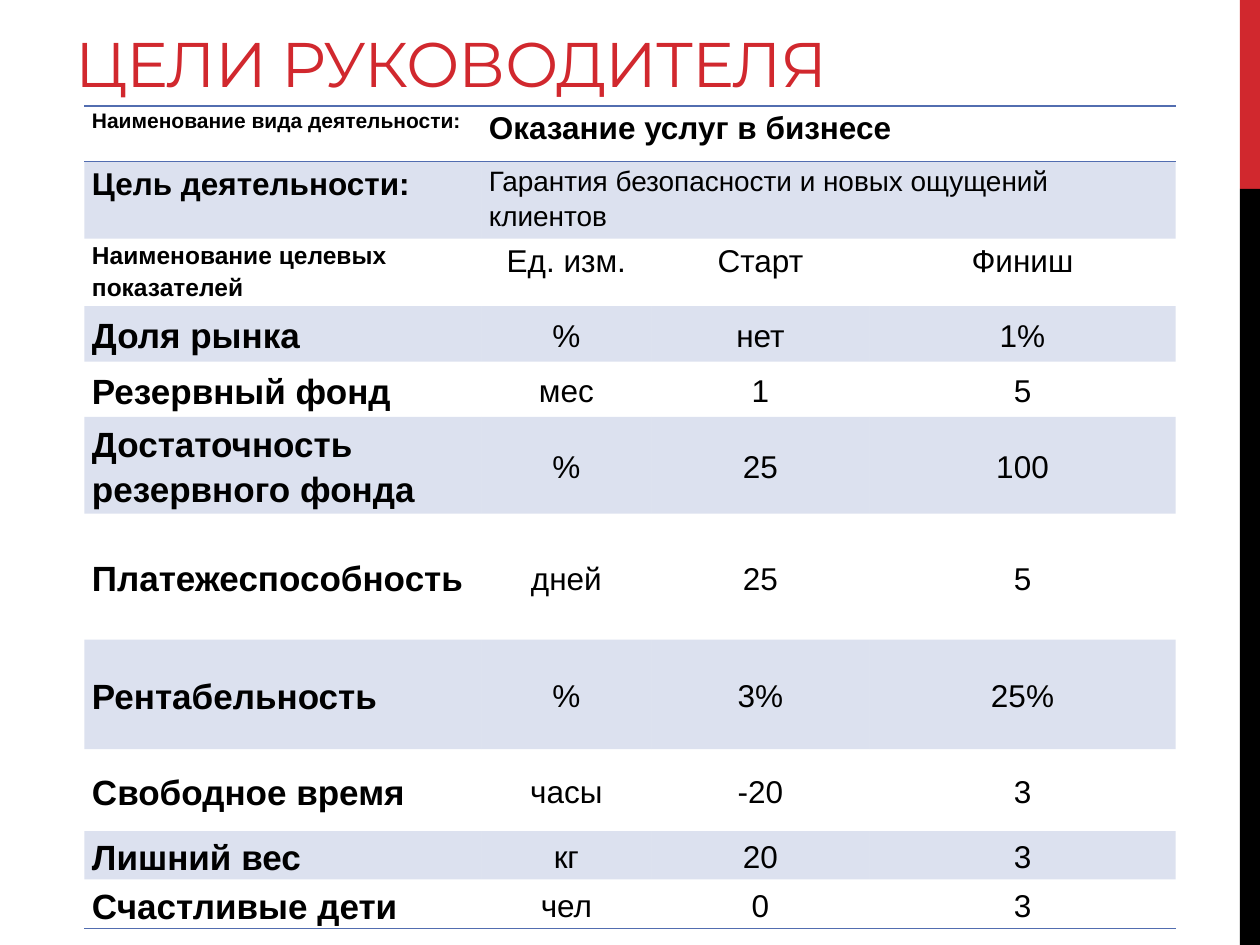
import pptx
import pptx.util
import pptx.dml.color
import pptx.enum.shapes
import pptx.enum.text
import pptx.oxml.ns
from dataclasses import dataclass
from lxml import etree

Inches, Pt = pptx.util.Inches, pptx.util.Pt
RGB = pptx.dml.color.RGBColor.from_string
ANCHOR, ALIGN = pptx.enum.text.MSO_ANCHOR, pptx.enum.text.PP_ALIGN
qn = pptx.oxml.ns.qn


@dataclass(frozen=True)
class Theme:
    accent: str = "D1282E"
    black: str = "000000"
    table: str = "526DB0"
    band_alpha: int = 20
    title_font: str = "Montserrat"
    body_font: str = "Arial"
    title: int = 36
    label: int = 20
    value: int = 18
    goal: int = 16
    heading: int = 14
    small: int = 12


T = Theme()
NO_STYLE = "{2D5ABB26-0587-4C30-8999-92F81FD0307C}"
COLS = [3.15, 1.35, 1.73, 2.43]
# Row height, then the texts of the row
ROWS = [
    (0.44, ["Наименование вида деятельности:", "Оказание услуг в бизнесе"]),
    (0.44, ["Цель деятельности:", "Гарантия безопасности и новых ощущений клиентов"]),
    (0.40, ["Наименование целевых показателей", "Ед. изм.", "Старт", "Финиш"]),
    (0.44, ["Доля рынка", "%", "нет", "1%"]),
    (0.44, ["Резервный фонд", "мес", "1", "5"]),
    (0.60, ["Достаточность резервного фонда", "%", "25", "100"]),
    (1.00, ["Платежеспособность", "дней", "25", "5"]),
    (0.87, ["Рентабельность", "%", "3%", "25%"]),
    (0.65, ["Свободное время", "часы", "-20", "3"]),
    (0.22, ["Лишний вес", "кг", "20", "3"]),
    (0.39, ["Счастливые дети", "чел", "0", "3"]),
]
HEAD_ROWS = 3
# Formats that differ from the plain label and value cells
SPECIAL = {
    (0, 0): dict(size=T.small),
    (0, 1): dict(bold=True, align=ALIGN.LEFT),
    (1, 0): dict(size=T.value),
    (1, 1): dict(size=T.goal, align=ALIGN.LEFT),
    (2, 0): dict(size=T.heading),
}


def write_text(tf, text, size, font=T.body_font, color=T.black, bold=False,
               align=ALIGN.LEFT, line_spacing=None, spacing=None):
    p = tf.paragraphs[0]
    p.alignment = align
    if line_spacing:
        p.line_spacing = line_spacing
    r = p.add_run()
    r.text = text
    r.font.size, r.font.name, r.font.bold = Pt(size), font, bold
    r.font.color.rgb = RGB(color)
    if spacing is not None:
        r.font._element.set("spc", str(round(spacing * 100)))


def add_border(cell, side):
    ln = etree.SubElement(cell._tc.get_or_add_tcPr(), qn(f"a:ln{side}"), w=str(Pt(1)))
    fill = etree.SubElement(ln, qn("a:solidFill"))
    etree.SubElement(fill, qn("a:srgbClr"), val=T.table)


def shade(cell):
    cell.fill.solid()
    cell.fill.fore_color.rgb = RGB(T.table)
    clr = cell._tc.tcPr.find(f"{qn('a:solidFill')}/{qn('a:srgbClr')}")
    etree.SubElement(clr, qn("a:alpha"), val=str(T.band_alpha * 1000))


def add_side_bar(s, x, y, w, h):
    """Red fifth above a black remainder."""
    top = h / 5
    for dy, height, color in ((0, top, T.accent), (top, h - top, T.black)):
        sp = s.shapes.add_shape(pptx.enum.shapes.MSO_SHAPE.RECTANGLE,
                                Inches(x), Inches(y + dy), Inches(w), Inches(height))
        sp.shadow.inherit = False
        sp.fill.solid()
        sp.fill.fore_color.rgb = RGB(color)
        sp.line.fill.background()


def add_title(s, x, y, w, h):
    tf = s.shapes.add_textbox(Inches(x), Inches(y), Inches(w), Inches(h)).text_frame
    tf.word_wrap = True
    tf.vertical_anchor = ANCHOR.BOTTOM
    write_text(tf, "ЦЕЛИ РУКОВОДИТЕЛЯ", T.title, font=T.title_font,
               color=T.accent, spacing=-0.6)


def add_goals_table(s, x, y, w, h):
    gf = s.shapes.add_table(len(ROWS), len(COLS), Inches(x), Inches(y), Inches(w), Inches(h))
    tbl = gf.table
    tbl.first_row = tbl.horz_banding = False
    tbl._tbl.tblPr.find(qn("a:tableStyleId")).text = NO_STYLE
    for col, width in zip(tbl.columns, COLS):
        col.width = Inches(width)

    for i, (height, texts) in enumerate(ROWS):
        tbl.rows[i].height = Inches(height)
        if len(texts) < len(COLS):
            tbl.cell(i, 1).merge(tbl.cell(i, len(COLS) - 1))
        for j in range(len(COLS)):
            cell = tbl.cell(i, j)
            cell.margin_left = cell.margin_right = Inches(0.06)
            cell.margin_top = cell.margin_bottom = 0
            cell.vertical_anchor = ANCHOR.TOP if i < HEAD_ROWS else ANCHOR.MIDDLE
            # Rules around the first row and under the last
            if i == 0:
                add_border(cell, "T")
            if i in (0, len(ROWS) - 1):
                add_border(cell, "B")
            if i % 2:
                shade(cell)
            if j < len(texts):
                fmt = (dict(size=T.value, align=ALIGN.CENTER) if j
                       else dict(size=T.label, bold=True))
                fmt.update(SPECIAL.get((i, j), {}))
                write_text(cell.text_frame, texts[j], line_spacing=1.15, **fmt)
    gf.height = Inches(h)


def main():
    prs = pptx.Presentation()
    prs.slide_width, prs.slide_height = Inches(10), Inches(7.5)
    s = prs.slides.add_slide(prs.slide_layouts[6])
    add_side_bar(s, 9.84, 0, 0.16, 7.5)
    add_title(s, 0.5, -0.66, 7.81, 1.5)
    add_goals_table(s, 0.67, 0.84, 8.67, 6.48)
    prs.save("out.pptx")


if __name__ == "__main__":
    main()
